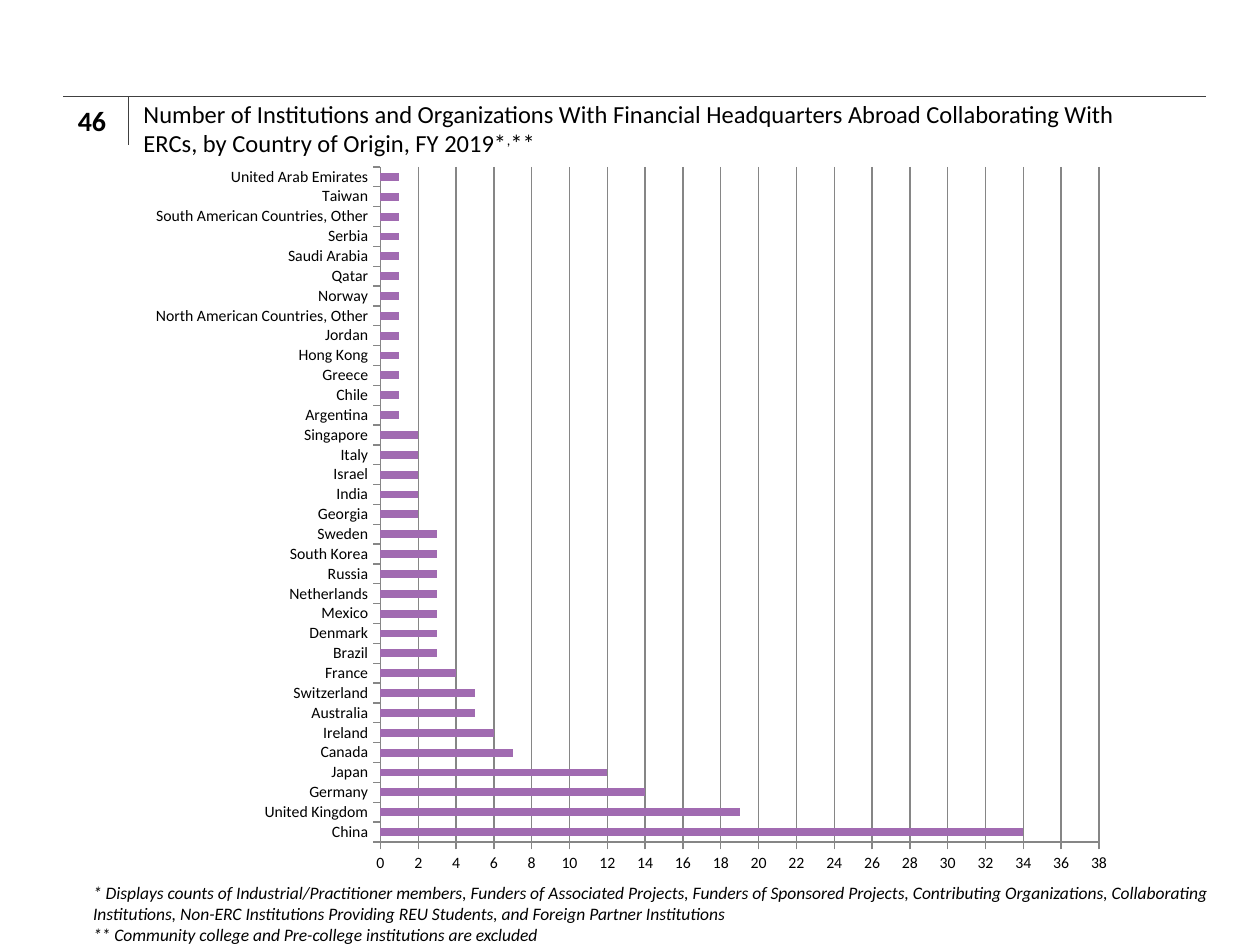
from lxml import etree
from pptx import Presentation
from pptx.chart.data import CategoryChartData
from pptx.dml.color import RGBColor
from pptx.enum.chart import XL_CHART_TYPE, XL_TICK_MARK
from pptx.enum.shapes import MSO_CONNECTOR
from pptx.enum.text import MSO_ANCHOR, PP_ALIGN
from pptx.oxml import parse_xml
from pptx.oxml.ns import nsdecls, qn
from pptx.util import Inches, Pt

BAR = XL_CHART_TYPE.BAR_CLUSTERED
OUT = XL_TICK_MARK.OUTSIDE
STRAIGHT = MSO_CONNECTOR.STRAIGHT
TOP, MIDDLE = MSO_ANCHOR.TOP, MSO_ANCHOR.MIDDLE
LEFT, CENTER = PP_ALIGN.LEFT, PP_ALIGN.CENTER

FONT = "Calibri"
COLORS = {"text": "000000", "rule": "404040", "bar": "A16BB1", "grid": "868686"}
COLS, ROWS = 100, 75

# Countries by number of institutions, from the bottom bar up
COUNTS = {
    34: ["China"],
    19: ["United Kingdom"],
    14: ["Germany"],
    12: ["Japan"],
    7: ["Canada"],
    6: ["Ireland"],
    5: ["Australia", "Switzerland"],
    4: ["France"],
    3: ["Brazil", "Denmark", "Mexico", "Netherlands", "Russia",
        "South Korea", "Sweden"],
    2: ["Georgia", "India", "Israel", "Italy", "Singapore"],
    1: ["Argentina", "Chile", "Greece", "Hong Kong", "Jordan",
        "North American Countries, Other", "Norway", "Qatar", "Saudi Arabia",
        "Serbia", "South American Countries, Other", "Taiwan",
        "United Arab Emirates"],
}

TITLE = [
    ("Number of Institutions and Organizations With Financial Headquarters "
     "Abroad Collaborating With ERCs, by Country of Origin, FY 2019*", False),
    (",", True),
    ("**", False),
]
NOTES = [
    "* Displays counts of Industrial/Practitioner members, Funders of "
    "Associated Projects, Funders of Sponsored Projects, Contributing "
    "Organizations, Collaborating Institutions, Non-ERC Institutions "
    "Providing REU Students, and Foreign Partner Institutions",
    "** Community college and Pre-college institutions are excluded",
]


def color(name):
    return RGBColor.from_string(COLORS[name])


class Page:
    """Draws on one slide; places are columns and rows of the grid."""

    def __init__(self, deck):
        self.slide = deck.slides.add_slide(deck.slide_layouts[6])
        self.shapes = self.slide.shapes
        self.col = deck.slide_width / COLS
        self.row = deck.slide_height / ROWS

    def place(self, x, y, *size):
        spots = [x * self.col, y * self.row]
        if size:
            spots += [size[0] * self.col, size[1] * self.row]
        return [round(spot) for spot in spots]

    def style(self, font, size, bold=False, italic=False):
        font.name, font.size = FONT, Pt(size)
        font.bold, font.italic = bold, italic
        font.color.rgb = color("text")

    def rule(self, start, end):
        line = self.shapes.add_connector(
            STRAIGHT, *self.place(*start), *self.place(*end))
        line.line.color.rgb = color("rule")
        line.line.width = Pt(0.25)
        etree.SubElement(line._element.spPr, qn("a:effectLst"))

    def text(self, box, lines, size, anchor=TOP, align=LEFT, **look):
        """Each line is a list of (words, raised) runs."""
        frame = self.shapes.add_textbox(*self.place(*box)).text_frame
        frame.word_wrap = True
        frame.vertical_anchor = anchor
        for i, runs in enumerate(lines):
            para = frame.add_paragraph() if i else frame.paragraphs[0]
            para.alignment = align
            self.style(para.font, size, **look)
            for words, raised in runs:
                run = para.add_run()
                run.text = words
                if raised:
                    run._r.get_or_add_rPr().set("baseline", "30000")

    def axis(self, axis):
        axis.major_tick_mark = OUT
        axis.format.line.color.rgb = color("grid")
        self.style(axis.tick_labels.font, 9)

    def bars(self, box, counts, plot):
        """Bar chart whose inner plot area is given as shares of the chart."""
        data = CategoryChartData()
        data.categories = [name for names in counts.values() for name in names]
        data.add_series("Series 1", [n for n, names in counts.items()
                                     for _ in names])
        chart = self.shapes.add_chart(BAR, *self.place(*box), data).chart
        chart.has_legend = chart.has_title = False
        self.style(chart.font, 10)

        bars = chart.plots[0]
        bars.gap_width = 151
        bars.vary_by_categories = False
        fill = bars.series[0].format.fill
        fill.solid()
        fill.fore_color.rgb = color("bar")

        self.axis(chart.category_axis)
        scale = chart.value_axis
        self.axis(scale)
        scale.minimum_scale, scale.maximum_scale = 0, 38
        scale.major_unit = 2
        scale.has_major_gridlines = True
        scale.major_gridlines.format.line.color.rgb = color("grid")
        self.layout(chart, plot)

    def layout(self, chart, plot):
        parts = "".join(f'<c:{tag}Mode val="edge"/>' for tag in "xy")
        parts += "".join(f'<c:{tag} val="{share}"/>'
                         for tag, share in zip("xywh", plot))
        area = chart._chartSpace.chart.plotArea
        for old in area.findall(qn("c:layout")):
            area.remove(old)
        area.insert(0, parse_xml(
            f'<c:layout {nsdecls("c")}><c:manualLayout>'
            f'<c:layoutTarget val="inner"/>{parts}'
            '</c:manualLayout></c:layout>'))


def main():
    deck = Presentation()
    deck.slide_width, deck.slide_height = Inches(10), Inches(7.5)
    page = Page(deck)
    page.rule((5, 7.6), (95.7, 7.6))
    page.rule((10.2, 11.5), (10.2, 7.7))
    page.text((10.4, 7.9, 82.5, 4.5), [TITLE], 14, MIDDLE)
    page.text((4.5, 7.5, 5.6, 4.1), [[("46", False)]], 16, MIDDLE, CENTER,
              bold=True)
    page.bars((8.6, 12.4, 80.9, 57), COUNTS, (0.267, 0.015, 0.705, 0.94))
    page.text((6.4, 69.5, 92.1, 5.5), [[(note, False)] for note in NOTES], 10,
              italic=True)
    deck.save("out.pptx")


if __name__ == "__main__":
    main()
